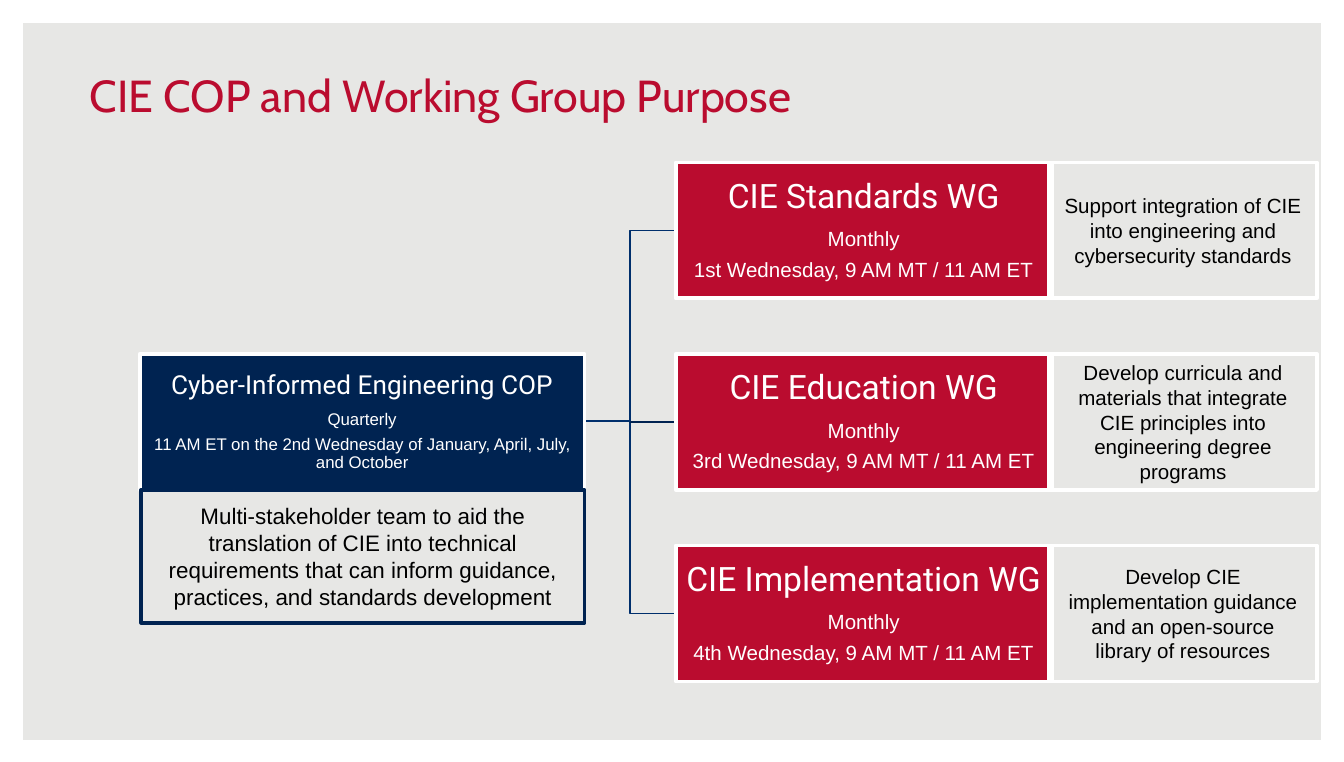
"""Build the slide on the CIE community of practice and its working groups."""
import pptx
import pptx.dml.color
import pptx.enum.shapes
import pptx.enum.text
import pptx.util

Cm, Pt = pptx.util.Cm, pptx.util.Pt
KIND = pptx.enum.shapes.MSO_SHAPE
ALIGN = pptx.enum.text.PP_ALIGN
MID = pptx.enum.text.MSO_ANCHOR.MIDDLE
LOW = pptx.enum.text.MSO_ANCHOR.BOTTOM

RED, NAVY, BLUE = "BA0C2F", "002351", "002F6C"
WHITE, BLACK, GREY = "FFFFFF", "000000", "E7E7E5"

TITLE = "CIE COP and Working Group Purpose"
HUB = [
    "Cyber-Informed Engineering COP",
    "Quarterly",
    "11 AM ET on the 2nd Wednesday of January, April, July, and October",
]
AIM = ("Multi-stakeholder team to aid the translation of CIE into technical "
       "requirements that can inform guidance, practices, and standards development")
GROUPS = [
    ("CIE Standards WG", "1st",
     "Support integration of CIE into engineering and cybersecurity standards", BLUE),
    ("CIE Education WG", "3rd",
     "Develop curricula and materials that integrate CIE principles into "
     "engineering degree programs", NAVY),
    ("CIE Implementation WG", "4th",
     "Develop CIE implementation guidance and an open-source library of resources", BLUE),
]

TOP, STEP, HIGH = 3.07, 3.62, 2.57
LEFT, WIDE = 12.77, 7.11
NOTE, SPAN = 19.83, 5.06
START, BEND = 11.07, 11.91


def color(code):
    return pptx.dml.color.RGBColor.from_string(code)


def write(shape, lines, sizes, fonts=("Arial",), ink=BLACK, align=ALIGN.CENTER,
          anchor=MID, inset=(0.25, 0.13), pace=None):
    frame = shape.text_frame
    frame.word_wrap = True
    frame.vertical_anchor = anchor
    frame.margin_left = frame.margin_right = Cm(inset[0])
    frame.margin_top = frame.margin_bottom = Cm(inset[1])
    for i, line in enumerate(lines):
        para = frame.paragraphs[0] if i == 0 else frame.add_paragraph()
        size = sizes[min(i, len(sizes) - 1)]
        para.alignment = align
        if pace:
            para.line_spacing = pace
            para.space_after = Pt(round(size * 0.4, 1))
        run = para.add_run()
        run.text = line
        run.font.size = Pt(size)
        run.font.name = fonts[min(i, len(fonts) - 1)]
        run.font.color.rgb = color(ink)


def box(slide, spot, fill=None, edge=None, kind=KIND.RECTANGLE):
    shape = slide.shapes.add_shape(kind, *map(Cm, spot))
    shape.shadow.inherit = False
    if fill:
        shape.fill.solid()
        shape.fill.fore_color.rgb = color(fill)
    else:
        shape.fill.background()
    if edge:
        shape.line.color.rgb = color(edge)
        shape.line.width = Pt(2)
    else:
        shape.line.fill.background()
    return shape


def card(slide, spot, fill, lines, sizes):
    shape = box(slide, spot, fill, WHITE)
    write(shape, lines, sizes, fonts=("Roboto", "Arial"), ink=WHITE,
          inset=(0.03, 0.03), pace=0.9)


def link(slide, start, end, ink):
    path = slide.shapes.build_freeform(Cm(START), Cm(start), scale=1.0)
    turns = [(BEND, start), (BEND, end), (LEFT, end)]
    path.add_line_segments([(Cm(x), Cm(y)) for x, y in turns], close=False)
    shape = path.convert_to_shape()
    shape.shadow.inherit = False
    shape.fill.background()
    shape.line.color.rgb = color(ink)
    shape.line.width = Pt(0.75)


def main():
    deck = pptx.Presentation()
    deck.slide_width, deck.slide_height = Cm(25.4), Cm(14.4)
    slide = deck.slides.add_slide(deck.slide_layouts[6])
    slide.background.fill.solid()
    slide.background.fill.fore_color.rgb = color(GREY)

    rim = box(slide, (0, 0, 25.4, 14.42), WHITE, kind=KIND.FRAME)
    rim.adjustments[0] = 0.03
    head = slide.shapes.add_textbox(Cm(1.45), Cm(1.27), Cm(21.59), Cm(1.27))
    write(head, [TITLE], [24], fonts=["Cabin"], ink=RED, align=ALIGN.LEFT,
          anchor=LOW, inset=(0.25, 0.25))

    tops = [TOP + i * STEP for i in range(len(GROUPS))]
    for top, group in reversed(list(zip(tops, GROUPS))):
        link(slide, tops[1] + HIGH / 2 - 0.02, top + HIGH / 2, group[3])

    card(slide, (2.64, tops[1], 8.41, HIGH), NAVY, HUB, [14, 9])
    for top, (name, week, note, ink) in zip(tops, GROUPS):
        lines = [name, "Monthly", f"{week} Wednesday, 9 AM MT / 11 AM ET"]
        card(slide, (LEFT, top, WIDE, HIGH), RED, lines, [18, 11])

    aim = box(slide, (2.67, tops[1] + HIGH, 8.38, 2.51), edge=NAVY)
    write(aim, [AIM], [12])
    for top, group in zip(tops, GROUPS):
        write(box(slide, (NOTE, top, SPAN, HIGH), edge=WHITE), [group[2]], [11])

    deck.save("out.pptx")


if __name__ == "__main__":
    main()
